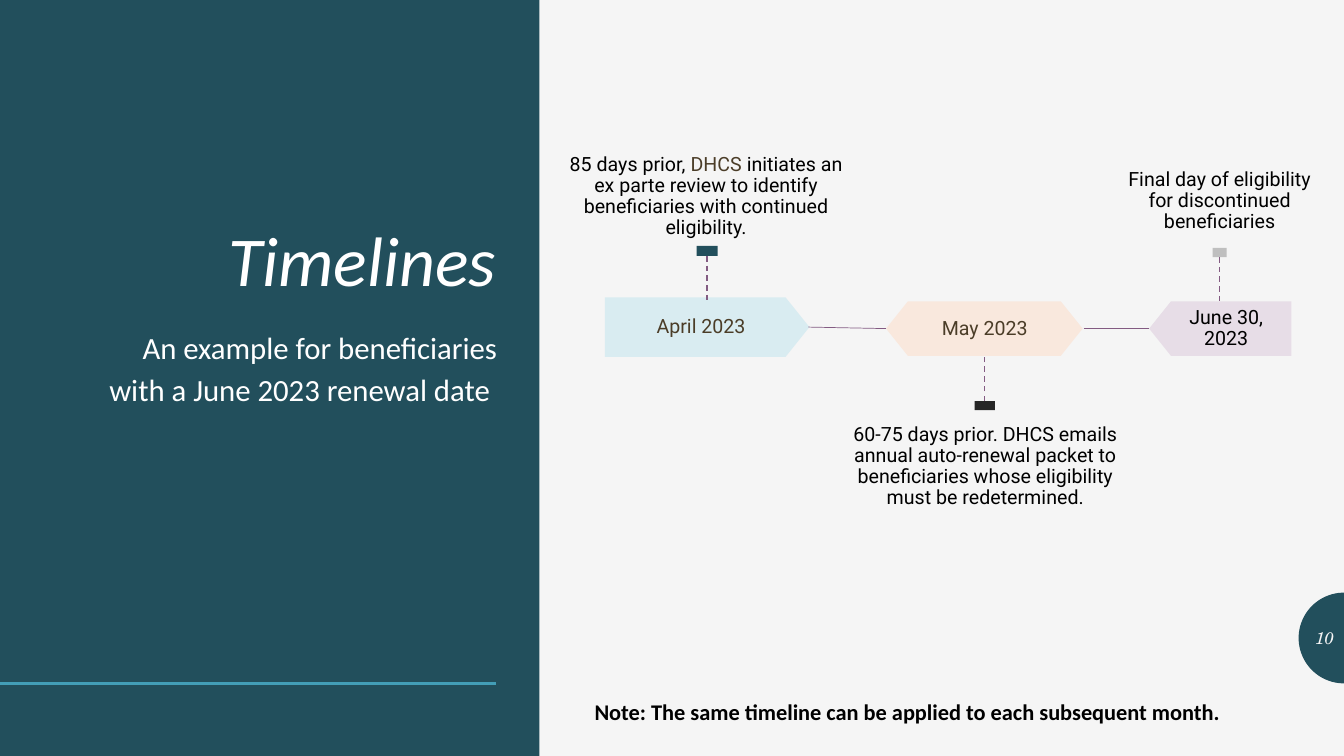
import math

from lxml import etree
from pptx import Presentation
from pptx.dml.color import RGBColor
from pptx.enum.dml import MSO_LINE
from pptx.enum.shapes import MSO_CONNECTOR, MSO_SHAPE
from pptx.enum.text import MSO_ANCHOR, PP_ALIGN
from pptx.oxml.ns import qn
from pptx.util import Inches, Pt

STRAIGHT = MSO_CONNECTOR.STRAIGHT
DASH = MSO_LINE.DASH
RECTANGLE, PENTAGON, HEXAGON = MSO_SHAPE.RECTANGLE, MSO_SHAPE.PENTAGON, MSO_SHAPE.HEXAGON
TOP, MIDDLE, BOTTOM = MSO_ANCHOR.TOP, MSO_ANCHOR.MIDDLE, MSO_ANCHOR.BOTTOM
LEFT, CENTER, RIGHT = PP_ALIGN.LEFT, PP_ALIGN.CENTER, PP_ALIGN.RIGHT
TOP_SIDE, BOTTOM_SIDE = 0, 2

COLUMNS, ROWS = 133.33, 75
CELL = Inches(0.1)

COLORS = {
    "paper": "F5F5F5",
    "teal": "224F5C",
    "rule": "439EB7",
    "white": "FFFFFF",
    "black": "000000",
    "brown": "4B3D28",
    "plum": "835B82",
    "ice": "D9ECF1",
    "peach": "F9E8DD",
    "lilac": "E7DDE7",
    "charcoal": "262626",
    "silver": "BFBFBF",
}


def color(name):
    return RGBColor.from_string(COLORS[name])


def cells(*counts):
    return [round(count * CELL) for count in counts]


def write(para, text, font="Roboto", size=14, ink="black", bold=False, italic=False):
    span = para.add_run()
    span.text = text
    span.font.name = font
    span.font.size = Pt(size)
    span.font.color.rgb = color(ink)
    span.font.bold = bold
    span.font.italic = italic


class TimelinePage:
    def __init__(self, deck):
        self.page = deck.slides.add_slide(deck.slide_layouts[6])
        self.page.background.fill.solid()
        self.page.background.fill.fore_color.rgb = color("paper")

    def paint(self, shape, fill):
        shape.shadow.inherit = False
        shape.fill.solid()
        shape.fill.fore_color.rgb = color(fill)
        shape.line.fill.background()
        return shape

    def block(self, area, fill, kind=RECTANGLE, point=None, turn=0):
        shape = self.page.shapes.add_shape(kind, *cells(*area))
        if point is not None:
            shape.adjustments[0] = point
        shape.rotation = turn
        return self.paint(shape, fill)

    def half_disc(self, center, radius, fill, steps=48):
        angles = [math.pi * (0.5 + step / steps) for step in range(steps + 1)]
        points = [
            (center[0] + radius * math.cos(angle), center[1] - radius * math.sin(angle))
            for angle in angles
        ]
        outline = self.page.shapes.build_freeform(*cells(*points[0]))
        outline.add_line_segments([cells(*point) for point in points[1:]], close=True)
        return self.paint(outline.convert_to_shape(), fill)

    def line(self, start, end, ink="plum", width=0.5, dash=None):
        connector = self.page.shapes.add_connector(STRAIGHT, *cells(*start, *end))
        connector.line.color.rgb = color(ink)
        connector.line.width = Pt(width)
        if dash:
            connector.line.dash_style = dash
        etree.SubElement(connector._element.spPr, qn("a:effectLst"))
        return connector

    def flag(self, area, fill, stem_end):
        left, top, width, height = area
        marker = self.block(area, fill)
        middle = left + width / 2
        side = BOTTOM_SIDE if stem_end > top else TOP_SIDE
        stem = self.line((middle, top), (middle, stem_end), width=1, dash=DASH)
        stem.begin_connect(marker, side)

    def text(self, area, parts, align=CENTER, anchor=TOP, spacing=None,
             insets=(1, 0.5), **style):
        box = self.page.shapes.add_textbox(*cells(*area))
        frame = box.text_frame
        frame.word_wrap = True
        frame.vertical_anchor = anchor
        across, down = cells(*insets)
        frame.margin_left = frame.margin_right = across
        frame.margin_top = frame.margin_bottom = down
        para = frame.paragraphs[0]
        para.alignment = align
        if spacing:
            para.line_spacing = spacing
        for words, ink in parts:
            write(para, words, ink=ink, **style)

    def month(self, area, label, ink="brown"):
        self.text(area, [(label, ink)], anchor=MIDDLE, spacing=0.9, insets=(1.2, 1.2))

    def event(self, area, parts, anchor=BOTTOM):
        self.text(area, parts, anchor=anchor, spacing=0.9, insets=(0, 1.4))


def main():
    deck = Presentation()
    deck.slide_width, deck.slide_height = cells(COLUMNS, ROWS)
    page = TimelinePage(deck)

    page.half_disc((COLUMNS, 63.3), 4.5, "teal")
    page.block((0, 0, 53.5, ROWS), "teal")
    page.line((0, 67.8), (49.2, 67.8), ink="rule", width=2)
    page.text((8.3, 6.1, 41.9, 24.3), [("Timelines", "white")], align=RIGHT,
              anchor=BOTTOM, spacing=0.9, font="Calibri", size=50, italic=True)
    page.text((8.3, 31.7, 42, 31.2),
              [("An example for beneficiaries with a June 2023 renewal date ", "white")],
              align=RIGHT, spacing=1.12, font="Calibri", size=22)
    page.text((128.9, 61.3, 4.43, 4), [("10", "paper")], align=RIGHT, anchor=MIDDLE,
              font="TeX Gyre Schola", size=12, italic=True)

    page.block((60, 29.5, 20.3, 5.9), "ice", PENTAGON, point=0.4)
    page.month((60, 29.5, 19.1, 5.9), "April 2023")
    page.event((56, 9.3, 28.1, 15.8), [
        ("85 days prior, ", "black"),
        ("DHCS ", "brown"),
        ("initiates an ex parte review to identify beneficiaries "
         "with continued eligibility.", "black"),
    ])
    page.flag((69.1, 24.4, 2.1, 1), "teal", stem_end=30)
    page.line((80.2, 32.45), (87.9, 32.6))

    page.block((87.9, 29.9, 19.5, 5.4), "peach", HEXAGON, point=0.4)
    page.month((90.3, 30.6, 14.8, 4.1), "May 2023")
    page.event((84.2, 40.7, 27.1, 14.3), [
        ("60-75 days prior. DHCS emails annual auto-renewal packet to "
         "beneficiaries whose eligibility must be redetermined.", "black"),
    ], anchor=TOP)
    page.flag((96.7, 39.8, 2, 0.9), "charcoal", stem_end=35.3)
    page.line((107.5, 32.6), (114, 32.6))

    page.block((114, 29.9, 14.1, 5.4), "lilac", PENTAGON, point=0.4, turn=180)
    page.month((115.1, 29.9, 13.1, 5.4), "June 30, 2023", ink="black")
    page.event((111.2, 10.2, 19.6, 14.3), [
        ("Final day of eligibility for discontinued beneficiaries", "black"),
    ])
    page.flag((120.3, 24.6, 1.4, 0.9), "silver", stem_end=29.9)

    page.text((58, 68.8, 75, 3.7),
              [("Note: The same timeline can be applied to each subsequent month.", "black")],
              align=LEFT, font="Calibri", size=16, bold=True)

    deck.save("out.pptx")


if __name__ == "__main__":
    main()
